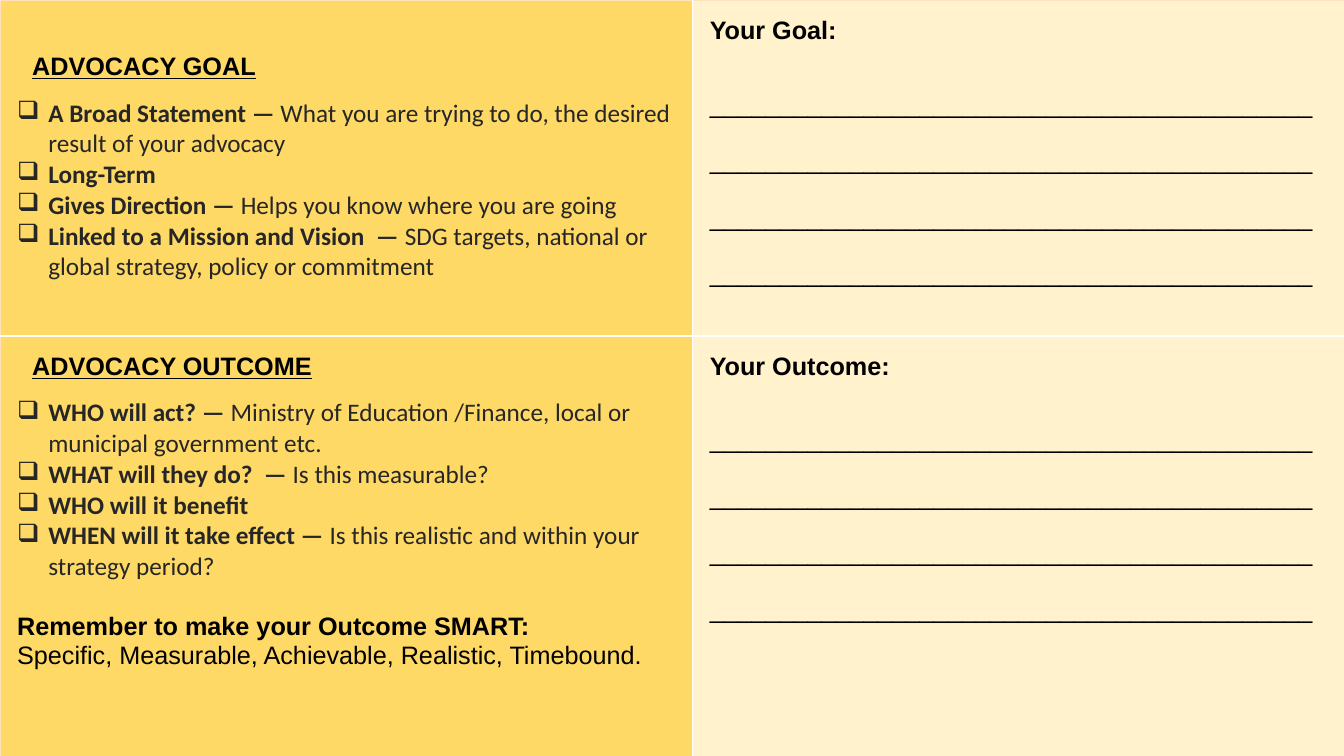
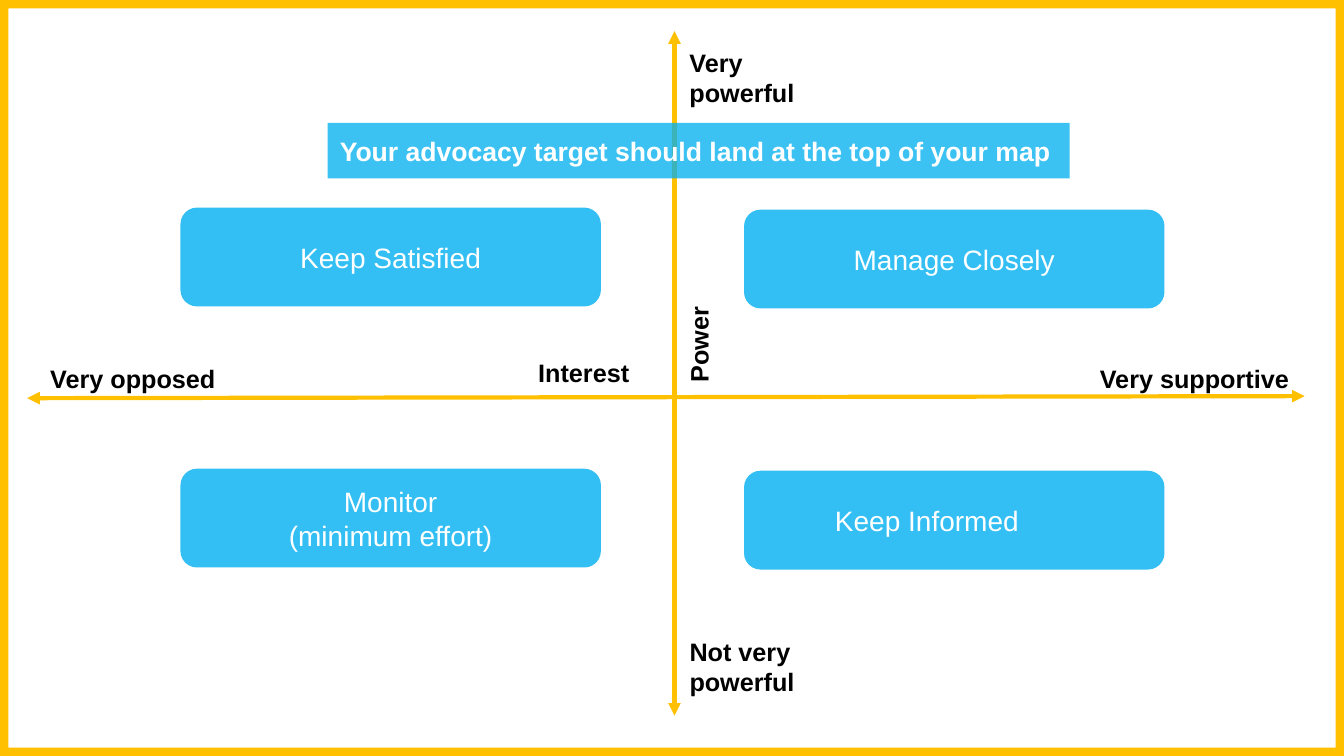
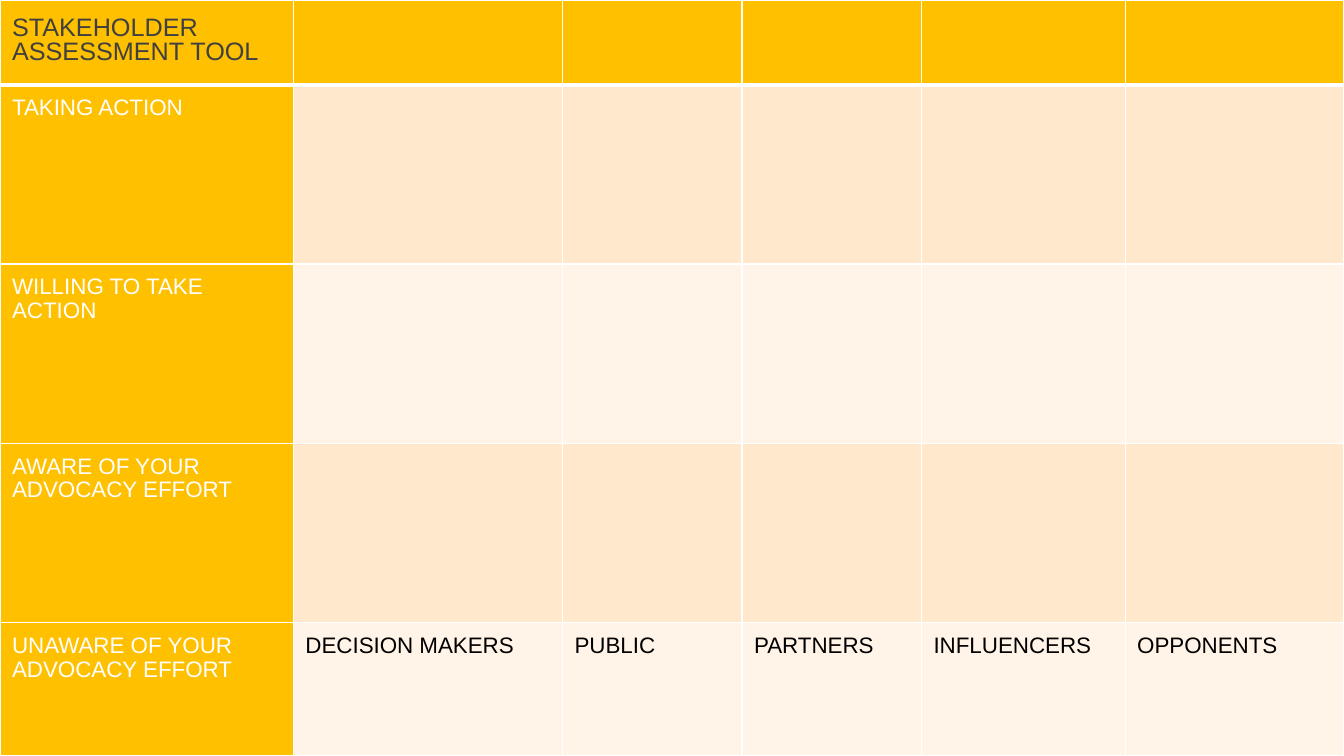
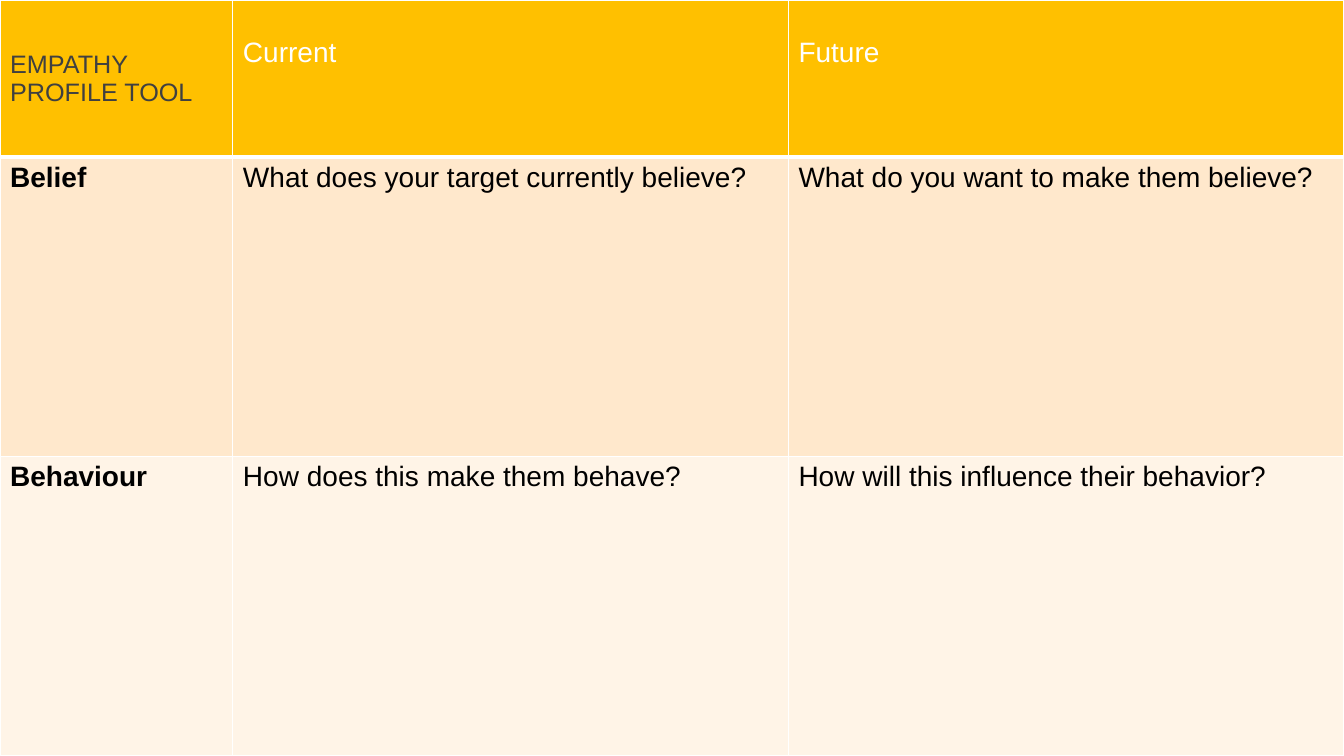
from lxml.etree import SubElement
from pptx import Presentation
from pptx.dml.color import RGBColor
from pptx.enum.shapes import MSO_CONNECTOR as Connector, MSO_SHAPE as Shape
from pptx.enum.text import MSO_ANCHOR as Anchor, MSO_AUTO_SIZE as AutoSize, PP_ALIGN as Align
from pptx.oxml.ns import qn
from pptx.util import Inches, Pt

WIDTH, HEIGHT = 13.33, 7.5
FONT, LIST_FONT = "Arial", "Calibri"
COLORS = {
    "amber": "FFC000", "gold": "FFD966", "cream": "FFF2CC", "peach": "FFE8CC",
    "ivory": "FFF4E7", "rim": "FFE2BD", "sky": "00B0F0", "white": "FFFFFF",
    "black": "000000", "grey": "404040", "ink": "262626",
}
# Table rules as (colour, points)
THIN_WHITE = ("white", 1)
TOOL_RULES = {"outer": THIN_WHITE, "column": THIN_WHITE, "header": ("white", 3), "row": THIN_WHITE}
PLAN_RULES = {"outer": ("rim", 0.5), "column": THIN_WHITE, "header": ("white", 1.5)}


def rgb(name):
    return RGBColor.from_string(COLORS[name])


# Text
def write(para, *spans, size=18, color="black", font=FONT, bold=False):
    """Fill a paragraph; a span is a text, or a (text, bold) pair."""
    para.font.name, para.font.size, para.font.bold = font, Pt(size), bold
    para.font.color.rgb = rgb(color)
    for span in spans:
        run = para.add_run()
        if isinstance(span, tuple):
            run.text, run.font.bold = span
        else:
            run.text = span
    return para


def write_lines(frame, text, align=None, line_spacing=None, **style):
    for index, line in enumerate(text.split("\n")):
        para = frame.add_paragraph() if index else frame.paragraphs[0]
        write(para, line, **style)
        para.alignment, para.line_spacing = align, line_spacing


def indent(para, margin, first=0, bullet=None):
    props = para._p.get_or_add_pPr()
    props.set("marL", str(Inches(margin)))
    props.set("indent", str(Inches(first)))
    if bullet:
        SubElement(props, qn("a:buChar"), char=bullet)


# Tables
def draw_edge(props, side, rule):
    color, width = rule
    line = SubElement(props, qn(f"a:ln{side}"), w=str(Pt(width)))
    SubElement(SubElement(line, qn("a:solidFill")), qn("a:srgbClr"), val=COLORS[color])


def add_grid(page, widths, heights, rules, fill_of, insets=None):
    """Add a slide-wide table; fill_of(row, col) names the fill of a cell."""
    table = page.shapes.add_table(len(heights), len(widths), 0, 0,
                                  Inches(WIDTH), Inches(HEIGHT)).table
    table.first_row = table.horz_banding = False
    for column, width in zip(table.columns, widths):
        column.width = Inches(width)
    for row, height in zip(table.rows, heights):
        row.height = Inches(height)

    last_row, last_col = len(heights) - 1, len(widths) - 1
    for r in range(len(heights)):
        for c in range(len(widths)):
            cell = table.cell(r, c)
            above = "outer" if r == 0 else "header" if r == 1 else "row"
            below = "outer" if r == last_row else "header" if r == 0 else "row"
            sides = {"L": "column" if c else "outer",
                     "R": "outer" if c == last_col else "column",
                     "T": above, "B": below}
            for side, rule in sides.items():
                draw_edge(cell._tc.get_or_add_tcPr(), side, rules[rule])
            cell.fill.solid()
            cell.fill.fore_color.rgb = rgb(fill_of(r, c))
            if insets:
                (cell.margin_left, cell.margin_top,
                 cell.margin_right, cell.margin_bottom) = map(Inches, insets)
    return table


def banded(row):
    return "amber" if row == 0 else "peach" if row % 2 else "ivory"


# Checklist and writing cells
def fill_checklist(cell, heading, items):
    frame = cell.text_frame
    para = frame.paragraphs[0]
    indent(para, 0.15)
    write(para, heading, bold=True).font.underline = True
    para.space_after = Pt(12)
    for lead, rest in items:
        para = frame.add_paragraph()
        indent(para, 0.31, -0.31, "❑")
        spans = [(lead, True)] + ([(rest, False)] if rest else [])
        write(para, *spans, color="ink", font=LIST_FONT)


def fill_writing_lines(cell, heading):
    cell.margin_right = Inches(0.3)
    write(cell.text_frame.paragraphs[0], heading, bold=True).space_after = Pt(12)
    write(cell.text_frame.add_paragraph(), "_" * 43 * 4).line_spacing = 2.0


# Map parts
def add_arrow(page, start, end):
    arrow = page.shapes.add_connector(Connector.STRAIGHT, *map(Inches, start + end))
    arrow.line.color.rgb, arrow.line.width = rgb("amber"), Pt(3)
    line = arrow.line._get_or_add_ln()
    for tag in ("a:headEnd", "a:tailEnd"):
        SubElement(line, qn(tag), type="triangle")
    SubElement(arrow._element.spPr, qn("a:effectLst"))


def add_label(page, text, left, top, width, height=0.4, rotation=0):
    box = page.shapes.add_textbox(*map(Inches, (left, top, width, height)))
    box.rotation = rotation
    box.text_frame.word_wrap = True
    box.text_frame.auto_size = AutoSize.SHAPE_TO_FIT_TEXT
    write_lines(box.text_frame, text, bold=True)


def add_panel(page, kind, area, color, text="", opacity=100, right_inset=0.1, **style):
    panel = page.shapes.add_shape(kind, *map(Inches, area))
    panel.shadow.inherit = False
    panel.line.fill.background()
    panel.fill.solid()
    panel.fill.fore_color.rgb = rgb(color)
    if opacity < 100:
        fill = panel._element.spPr.find(qn("a:solidFill"))
        SubElement(fill[0], qn("a:alpha"), val=str(opacity * 1000))
    if text:
        frame = panel.text_frame
        frame.word_wrap = True
        frame.vertical_anchor = Anchor.MIDDLE
        frame.margin_right = Inches(right_inset)
        write_lines(frame, text, align=Align.CENTER, color="white", **style)
    return panel


# Slides
def build_goal_page(page):
    table = add_grid(page, (6.87, 6.46), (3.33, 4.17), PLAN_RULES,
                     lambda row, col: "cream" if col else "gold", (0.17,) * 4)
    goal, outcome = table.cell(0, 0), table.cell(1, 0)
    goal.vertical_anchor = Anchor.MIDDLE
    fill_checklist(goal, "ADVOCACY GOAL", [
        ("A Broad Statement — ",
         "What you are trying to do, the desired result of your advocacy"),
        ("Long-Term", ""),
        ("Gives Direction — ", "Helps you know where you are going"),
        ("Linked to a Mission and Vision  — ",
         "SDG targets, national or global strategy, policy or commitment"),
    ])
    fill_checklist(outcome, "ADVOCACY OUTCOME", [
        ("WHO will act? — ",
         "Ministry of Education /Finance, local or municipal government etc."),
        ("WHAT will they do?  — ", "Is this measurable?"),
        ("WHO will it benefit", ""),
        ("WHEN will it take effect — ",
         "Is this realistic and within your strategy period?"),
    ])
    reminder = write(outcome.text_frame.add_paragraph(),
                     "Remember to make your Outcome SMART:", bold=True)
    reminder.space_before = Pt(22)
    write(outcome.text_frame.add_paragraph(),
          "Specific, Measurable, Achievable, Realistic, Timebound.")
    fill_writing_lines(table.cell(0, 1), "Your Goal:")
    fill_writing_lines(table.cell(1, 1), "Your Outcome:")


def build_power_map(page):
    # Axes and their labels
    add_arrow(page, (6.69, 0.31), (6.69, 7.1))
    add_arrow(page, (12.94, 3.93), (0.27, 3.95))
    add_label(page, "Very powerful", 6.74, 0.42, 1.67, 0.71)
    add_label(page, "Not very powerful", 6.74, 6.26, 1.59, 0.71)
    add_label(page, "Very opposed", 0.4, 3.56, 2.04)
    add_label(page, "Very supportive", 10.81, 3.56, 2.79)
    add_label(page, "Interest", 5.24, 3.5, 2.04)
    add_label(page, "Power", 5.91, 2.67, 2.04, rotation=270)

    # Border
    border = add_panel(page, Shape.FRAME, (0, 0, WIDTH, HEIGHT), "amber")
    border.adjustments[0] = 0.011

    # Quadrants: text, row, column, right inset
    quadrants = [("Manage Closely", 0, 1, 0.1), ("Keep Satisfied", 0, 0, 0.1),
                 ("Monitor\n(minimum effort)", 1, 0, 0.1), ("Keep Informed", 1, 1, 0.64)]
    for text, row, col, inset in quadrants:
        area = (1.79 + 5.59 * col, 2.06 + 2.59 * row + 0.02 * col, 4.17, 0.98)
        add_panel(page, Shape.ROUNDED_RECTANGLE, area, "sky", text, 80, inset, size=20)
    add_panel(page, Shape.RECTANGLE, (3.25, 1.22, 7.36, 0.55), "sky",
              "Your advocacy target should land at the top of your map",
              77, 0.17, size=19, bold=True)


def build_stakeholder_tool(page):
    table = add_grid(page, (2.91, 2.67, 1.78, 1.78, 2.02, 2.17),
                     (0.84, 1.78, 1.78, 1.78, 1.32), TOOL_RULES,
                     lambda row, col: banded(row) if col else "amber",
                     (0.12, 0.12, 0.23, 0.12))
    stages = ["STAKEHOLDER\nASSESSMENT TOOL", "TAKING ACTION", "WILLING TO TAKE ACTION",
              "AWARE OF YOUR ADVOCACY EFFORT", "UNAWARE OF YOUR ADVOCACY EFFORT"]
    groups = ["DECISION MAKERS", "PUBLIC", "PARTNERS", "INFLUENCERS", "OPPONENTS"]
    spacing = Pt(16.8)
    for row, text in enumerate(stages):
        write_lines(table.cell(row, 0).text_frame, text, line_spacing=spacing,
                    size=16 if row else 18, color="white" if row else "grey")
    for col, text in enumerate(groups, start=1):
        write_lines(table.cell(len(stages) - 1, col).text_frame, text,
                    line_spacing=spacing, size=16)
    table.cell(0, 0).vertical_anchor = Anchor.MIDDLE


def build_empathy_tool(page):
    table = add_grid(page, (2.31, 5.51, 5.51), (1.56, 2.97, 2.97), TOOL_RULES,
                     lambda row, col: banded(row))
    corner = table.cell(0, 0)
    corner.vertical_anchor = Anchor.MIDDLE
    write_lines(corner.text_frame, "EMPATHY PROFILE TOOL", color="grey")
    for col, text in enumerate(("Current", "Future"), start=1):
        cell = table.cell(0, col)
        cell.margin_top = Inches(0.37)
        write_lines(cell.text_frame, text, size=20, color="white")
    questions = [
        ("Belief", "What does your target currently believe?",
         "What do you want to make them believe?"),
        ("Behaviour", "How does this make them behave?",
         "How will this influence their behavior?"),
    ]
    for row, texts in enumerate(questions, start=1):
        for col, text in enumerate(texts):
            write_lines(table.cell(row, col).text_frame, text, size=20, bold=col == 0)


def main():
    deck = Presentation()
    deck.slide_width, deck.slide_height = Inches(WIDTH), Inches(HEIGHT)
    blank = deck.slide_layouts.get_by_name("Blank")
    for build in (build_goal_page, build_power_map,
                  build_stakeholder_tool, build_empathy_tool):
        build(deck.slides.add_slide(blank))
    deck.save("out.pptx")


if __name__ == "__main__":
    main()
